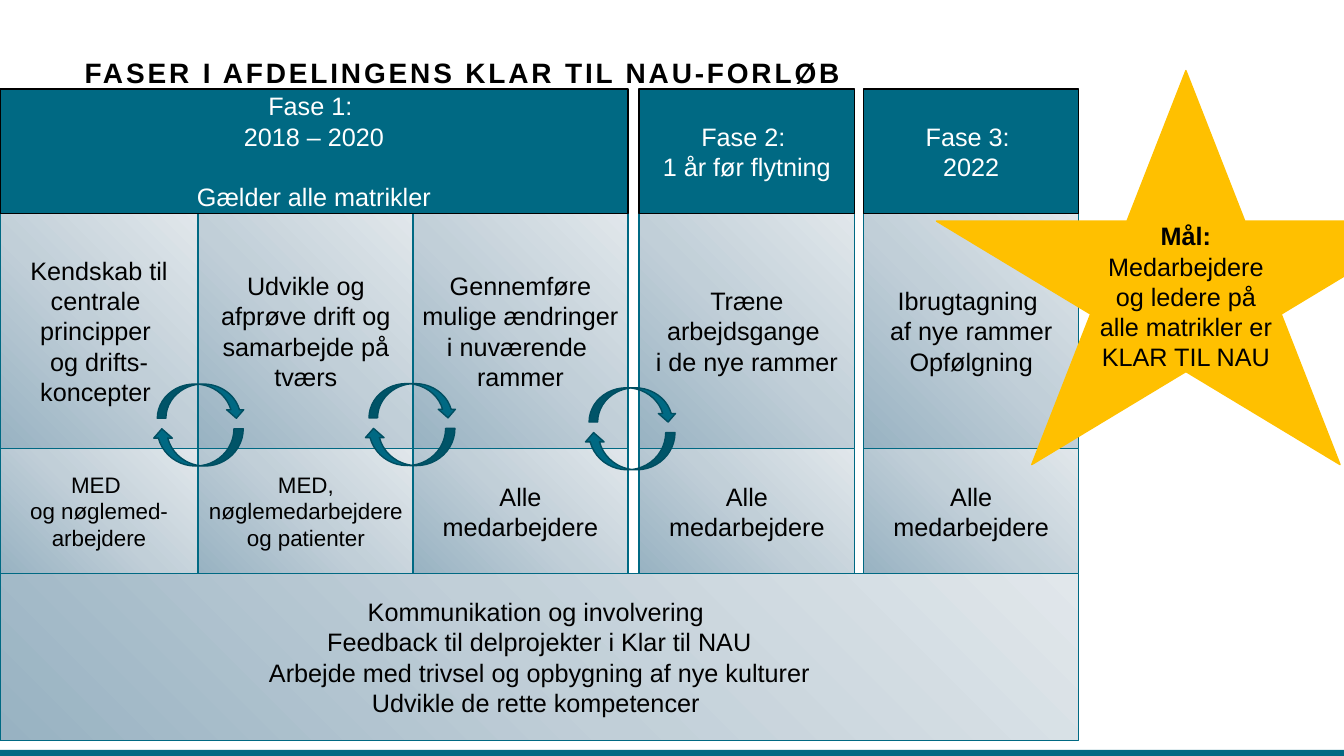
from copy import deepcopy

from pptx import Presentation
from pptx.dml.color import RGBColor
from pptx.enum import shapes, text
from pptx.util import Pt

BLACK = RGBColor(0x00, 0x00, 0x00)
WHITE = RGBColor(0xFF, 0xFF, 0xFF)
TEAL = RGBColor(0x00, 0x69, 0x83)
DARK_TEAL = RGBColor(0x00, 0x4E, 0x61)
GOLD = RGBColor(0xFF, 0xC0, 0x00)
STEEL = RGBColor(0x98, 0xB2, 0xC2)
MIST = RGBColor(0xC1, 0xCF, 0xD8)
PALE = RGBColor(0xE1, 0xE7, 0xEB)
GRADIENT = [(0, STEEL), (0.5, MIST), (1, PALE)]

SLIDE_WIDTH, SLIDE_HEIGHT = 960, 540
HEADER_TOP, HEADER_HEIGHT = 63.5, 89
ACTIVITY_TOP, ACTIVITY_HEIGHT = 152.3, 168
PEOPLE_TOP, PEOPLE_HEIGHT = 320.3, 89.5
BASE_TOP, BASE_HEIGHT = 409.8, 119
BLANK_LINE = 21.6

COLUMNS = [(0, 141.5), (142, 153), (295, 153.5), (456.5, 154), (617, 153.5)]
ACTIVITIES = [
    ["Kendskab til", "centrale ", "principper ", "og drifts-koncepter "],
    ["Udvikle og afprøve drift og samarbejde på tværs"],
    ["Gennemføre mulige ændringer i nuværende ", "rammer"],
    ["Træne arbejdsgange ", "i de nye rammer"],
    ["Ibrugtagning ", "af nye rammer", "Opfølgning"],
]
PEOPLE = [
    (["MED ", "og nøglemed-arbejdere"], 16),
    (["MED, nøglemedarbejdere og patienter"], 16),
    (["Alle medarbejdere"], 18),
    (["Alle medarbejdere"], 18),
    (["Alle medarbejdere"], 18),
]
PHASES = [
    (0, 2, ["Fase 1: ", "2018 – 2020", "Gælder alle matrikler"]),
    (3, 3, ["Fase 2: ", "1 år før flytning"]),
    (4, 4, ["Fase 3: ", "2022"]),
]
BASE_LINES = [
    "Kommunikation og involvering ",
    "Feedback til delprojekter i Klar til NAU",
    "Arbejde med trivsel og opbygning af nye kulturer",
    "Udvikle de rette kompetencer ",
]
CYCLES = [(109, 274.3), (260.2, 274), (417.4, 277)]


class PhaseSlide:
    font = "Arial"
    inset = 5.7

    def __init__(self, slide):
        self.slide = slide

    def shape(self, kind, left, top, width, height, fill, line=None):
        shape = self.slide.shapes.add_shape(
            kind, Pt(left), Pt(top), Pt(width), Pt(height))
        shape.shadow.inherit = False
        if fill is GRADIENT:
            self.gradient(shape)
        else:
            shape.fill.solid()
            shape.fill.fore_color.rgb = fill
        if line is None:
            shape.line.fill.background()
        else:
            shape.line.color.rgb = line
            shape.line.width = Pt(1)
        return shape

    def gradient(self, shape):
        shape.fill.gradient()
        shape.fill.gradient_angle = 45
        first = shape._element.xpath(".//a:gs")[0]
        first.addnext(deepcopy(first))
        for stop, (position, color) in zip(shape.fill.gradient_stops, GRADIENT):
            stop.position = position
            stop.color.rgb = color

    def run(self, paragraph, words, size, color, bold=False):
        run = paragraph.add_run()
        run.text = words
        run.font.name = self.font
        run.font.size = Pt(size)
        run.font.bold = bold
        run.font.color.rgb = color
        return run

    def paragraphs(self, shape, lines, size=18, color=BLACK):
        frame = shape.text_frame
        frame.word_wrap = True
        frame.vertical_anchor = text.MSO_ANCHOR.MIDDLE
        frame.margin_left = frame.margin_right = Pt(self.inset)
        frame.margin_top = frame.margin_bottom = Pt(self.inset)
        for index, runs in enumerate(lines):
            paragraph = frame.add_paragraph() if index else frame.paragraphs[0]
            paragraph.alignment = text.PP_ALIGN.CENTER
            for words, bold in runs:
                self.run(paragraph, words, size, color, bold)
        return frame.paragraphs

    def box(self, left, top, width, height, lines, fill=GRADIENT, line=TEAL,
            size=18, color=BLACK):
        shape = self.shape(shapes.MSO_SHAPE.RECTANGLE, left, top, width, height,
                           fill, line)
        return self.paragraphs(shape, [[(words, False)] for words in lines],
                               size, color)

    def title(self, words, left, top, width, height):
        frame = self.slide.shapes.add_textbox(
            Pt(left), Pt(top), Pt(width), Pt(height)).text_frame
        frame.word_wrap = True
        frame.vertical_anchor = text.MSO_ANCHOR.BOTTOM
        frame.margin_left = frame.margin_right = 0
        frame.margin_top = frame.margin_bottom = 0
        paragraph = frame.paragraphs[0]
        paragraph.line_spacing = 0.9
        run = self.run(paragraph, words, 20, BLACK, True)
        run._r.get_or_add_rPr().set("spc", "200")

    def star(self, left, top, width, height, runs):
        shape = self.shape(shapes.MSO_SHAPE.STAR_5_POINT, left, top, width,
                           height, GOLD, GOLD)
        self.paragraphs(shape, [runs])

    def cycle(self, left, top):
        self.shape(shapes.MSO_SHAPE.CURVED_DOWN_ARROW, left + 3.4, top,
                   62.6, 24.5, TEAL, DARK_TEAL)
        lower = self.shape(shapes.MSO_SHAPE.CURVED_UP_ARROW, left, top + 32,
                           64.8, 26.6, TEAL, DARK_TEAL)
        lower._element.spPr.get_or_add_xfrm().set("flipH", "1")


def main():
    presentation = Presentation()
    presentation.slide_width = Pt(SLIDE_WIDTH)
    presentation.slide_height = Pt(SLIDE_HEIGHT)
    page = PhaseSlide(presentation.slides.add_slide(presentation.slide_layouts[6]))

    page.shape(shapes.MSO_SHAPE.RECTANGLE, 0, 535.7, SLIDE_WIDTH, 4.3, TEAL)
    for (left, width), activity, (people, size) in zip(COLUMNS, ACTIVITIES, PEOPLE):
        page.box(left, ACTIVITY_TOP, width, ACTIVITY_HEIGHT, activity)
        page.box(left, PEOPLE_TOP, width, PEOPLE_HEIGHT, people, size=size)
    page.box(0, BASE_TOP, sum(COLUMNS[-1]), BASE_HEIGHT, BASE_LINES)

    for first, last, lines in PHASES:
        left = COLUMNS[first][0]
        paragraphs = page.box(left, HEADER_TOP, sum(COLUMNS[last]) - left,
                              HEADER_HEIGHT, lines, TEAL, BLACK, color=WHITE)
        for paragraph in paragraphs[2:]:
            paragraph.space_before = Pt(BLANK_LINE)

    page.star(668.9, 50.4, 356.4, 281.5, [
        ("Mål: ", True),
        ("Medarbejdere og ledere på alle matrikler er KLAR TIL NAU", False),
    ])
    page.title("FASER I AFDELINGENS KLAR TIL NAU-FORLØB", 60.5, 28, 839, 36)
    for left, top in CYCLES:
        page.cycle(left, top)

    presentation.save("out.pptx")


if __name__ == "__main__":
    main()
